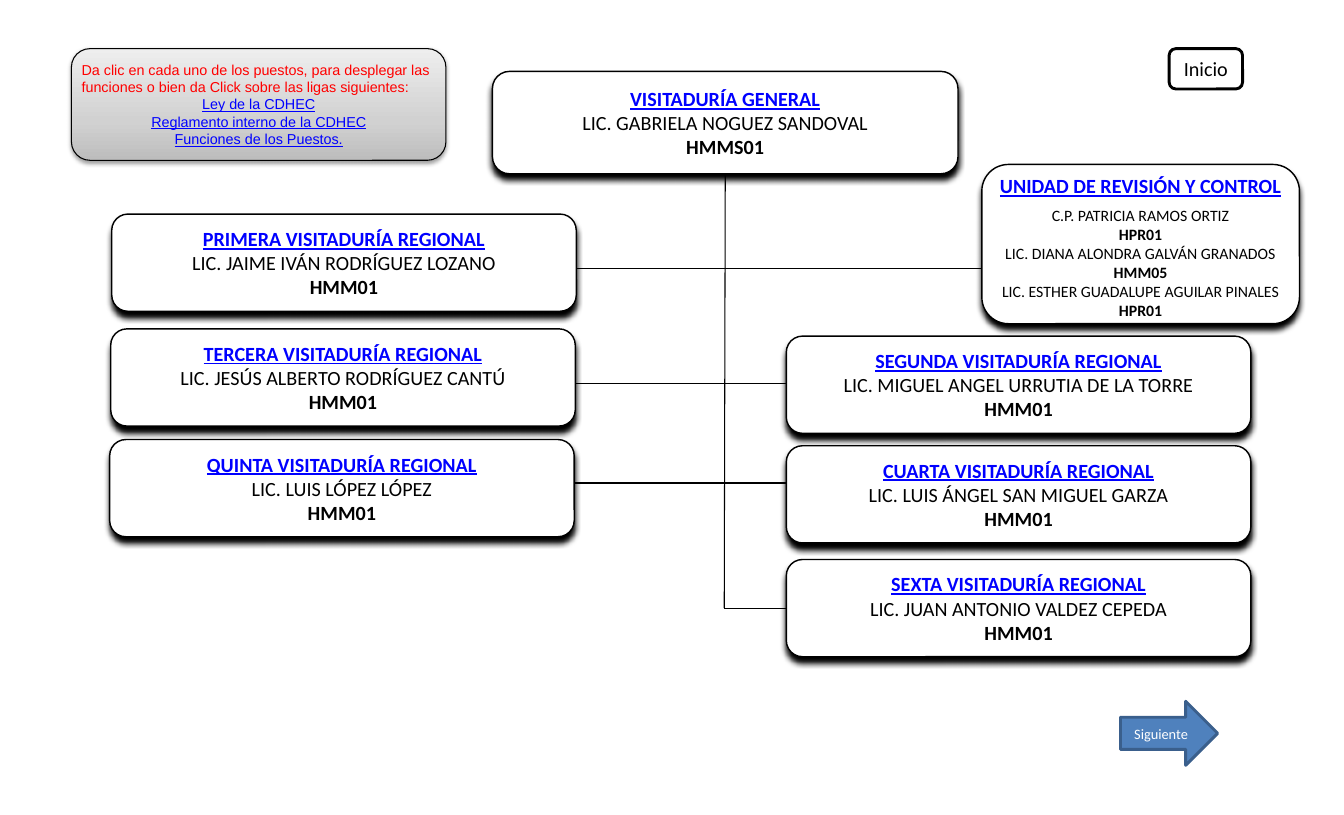
from copy import deepcopy

from lxml.etree import SubElement
from pptx import Presentation
from pptx.dml.color import RGBColor
from pptx.enum.shapes import MSO_CONNECTOR, MSO_SHAPE
from pptx.enum.text import MSO_ANCHOR, PP_ALIGN
from pptx.oxml.ns import qn
from pptx.util import Inches, Pt

THEME = {
    "black": RGBColor(0, 0, 0), "white": RGBColor(255, 255, 255),
    "link": RGBColor(0, 0, 255), "red": RGBColor(255, 0, 0),
    "arrow": RGBColor(0x4F, 0x81, 0xBD), "arrow_line": RGBColor(0x3A, 0x5F, 0x8C),
    "greys": [(0, "BDBDBD"), (0.35, "D1D1D1"), (1, "EEEEEE")],
    "font": "Calibri", "note_font": "Arial",
    "box": 14, "staff": 11, "small": 10,
}

prs = Presentation()
prs.slide_width, prs.slide_height = Inches(12.99), Inches(7.88)
s = prs.slides.add_slide(prs.slide_layouts[6])


def add_box(kind, at, fill, line, width, shadow=None):
    """Add a filled shape; shadow is (blur pt, distance pt, opacity %)."""
    sp = s.shapes.add_shape(kind, *map(Inches, at))
    sp.shadow.inherit = False
    if fill:
        sp.fill.solid()
        sp.fill.fore_color.rgb = THEME[fill]
    sp.line.color.rgb = THEME[line]
    sp.line.width = Pt(width)
    if shadow:
        blur, dist, opacity = shadow
        outer = SubElement(sp._element.spPr.find(qn("a:effectLst")), qn("a:outerShdw"),
                           blurRad=str(Pt(blur)), dist=str(Pt(dist)),
                           dir="5400000", algn="t", rotWithShape="0")
        color = SubElement(outer, qn("a:srgbClr"), val="000000")
        SubElement(color, qn("a:alpha"), val=str(opacity * 1000))
    sp.text_frame.vertical_anchor = MSO_ANCHOR.MIDDLE
    return sp


def add_line(tf, text, size, color="black", bold=False, link=False,
             font="font", align=PP_ALIGN.CENTER):
    """Write one paragraph, using the empty first one if there is no text yet."""
    p = tf.add_paragraph() if tf.text else tf.paragraphs[0]
    p.alignment = align
    r = p.add_run()
    r.text = text
    r.font.name, r.font.size = THEME[font], Pt(THEME[size])
    r.font.bold, r.font.underline = bold, link
    r.font.color.rgb = THEME["link" if link else color]
    return p


# Connecting lines
for x1, y1, x2, y2 in [
    (5.52, 2.6, 11.03, 2.6),
    (5.12, 3.71, 9.26, 3.71),
    (5.52, 4.67, 8.31, 4.67),
    (7.01, 1.69, 7, 5.88),
    (7, 5.88, 8.15, 5.88),
]:
    c = s.shapes.add_connector(MSO_CONNECTOR.STRAIGHT, *map(Inches, (x1, y1, x2, y2)))
    c.line.color.rgb = THEME["black"]
    c.line.width = Pt(0.75)
    SubElement(c._element.spPr, qn("a:effectLst"))

# Organisation boxes: title, then name and post code pairs
REGIONAL = (4.49, 0.94)
offices = [
    ((4.76, 0.69, 4.5, 0.99), "VISITADURÍA GENERAL",
     [("LIC. GABRIELA NOGUEZ SANDOVAL", "HMMS01")]),
    ((7.6, 3.25, *REGIONAL), "SEGUNDA VISITADURÍA REGIONAL",
     [("LIC. MIGUEL ANGEL URRUTIA DE LA TORRE", "HMM01")]),
    ((1.08, 2.07, *REGIONAL), "PRIMERA VISITADURÍA REGIONAL",
     [("LIC. JAIME IVÁN RODRÍGUEZ LOZANO", "HMM01")]),
    ((1.07, 3.18, *REGIONAL), "TERCERA VISITADURÍA REGIONAL",
     [("LIC. JESÚS ALBERTO RODRÍGUEZ CANTÚ", "HMM01")]),
    ((7.6, 4.31, *REGIONAL), "CUARTA VISITADURÍA REGIONAL",
     [("LIC. LUIS ÁNGEL SAN MIGUEL GARZA", "HMM01")]),
    ((1.06, 4.25, *REGIONAL), "QUINTA VISITADURÍA REGIONAL",
     [("LIC. LUIS LÓPEZ LÓPEZ", "HMM01")]),
    ((7.6, 5.41, *REGIONAL), "SEXTA VISITADURÍA REGIONAL",
     [("LIC. JUAN ANTONIO VALDEZ CEPEDA", "HMM01")]),
    ((9.49, 1.59, 3.07, 1.54), "UNIDAD DE REVISIÓN Y CONTROL",
     [("C.P. PATRICIA RAMOS ORTIZ", "HPR01"),
      ("LIC. DIANA ALONDRA GALVÁN GRANADOS", "HMM05"),
      ("LIC. ESTHER GUADALUPE AGUILAR PINALES", "HPR01")]),
]
for at, title, staff in offices:
    several = len(staff) > 1
    tf = add_box(MSO_SHAPE.ROUNDED_RECTANGLE, at, "white", "black", 1, (4, 4, 100)).text_frame
    tf.word_wrap = False
    tf.margin_left = tf.margin_right = Inches(0.17)
    tf.margin_top = Inches(0.14 if several else 0.09)
    tf.margin_bottom = Inches(0.09)
    p = add_line(tf, title, "box", bold=True, link=True)
    if several:
        p.space_after = Pt(6)
    for name, code in staff:
        add_line(tf, name, "staff" if several else "box")
        add_line(tf, code, "staff" if several else "box", bold=True)

# Home button
sp = add_box(MSO_SHAPE.ROUNDED_RECTANGLE, (11.3, 0.47, 0.71, 0.39), "white", "black", 2)
add_line(sp.text_frame, "Inicio", "box")

# Instructions panel with a grey gradient, dark at the bottom
sp = add_box(MSO_SHAPE.ROUNDED_RECTANGLE, (0.69, 0.47, 3.62, 1.08), None, "black", 0.75,
             (3.1, 1.6, 38))
sp.fill.gradient()
sp.fill.gradient_angle = 90
stop_list = sp._element.spPr.find(qn("a:gradFill")).find(qn("a:gsLst"))
stop_list.insert(1, deepcopy(stop_list[0]))
for stop, (position, grey) in zip(sp.fill.gradient_stops, THEME["greys"]):
    stop.position = position
    stop.color.rgb = RGBColor.from_string(grey)

# Instructions text
tf = s.shapes.add_textbox(*map(Inches, (0.69, 0.54, 3.62, 0.94))).text_frame
tf.word_wrap = True
add_line(tf, "Da clic en cada uno de los puestos, para desplegar las funciones "
         "o bien da Click sobre las ligas siguientes:",
         "small", "red", font="note_font", align=PP_ALIGN.LEFT)
for text in ["Ley de la CDHEC", "Reglamento interno de la CDHEC", "Funciones de los Puestos."]:
    add_line(tf, text, "small", link=True, font="note_font")

# Next arrow
sp = add_box(MSO_SHAPE.RIGHT_ARROW, (10.83, 6.78, 0.94, 0.62), "arrow", "arrow_line", 2)
add_line(sp.text_frame, "Siguiente", "small", "white")

prs.save("out.pptx")
